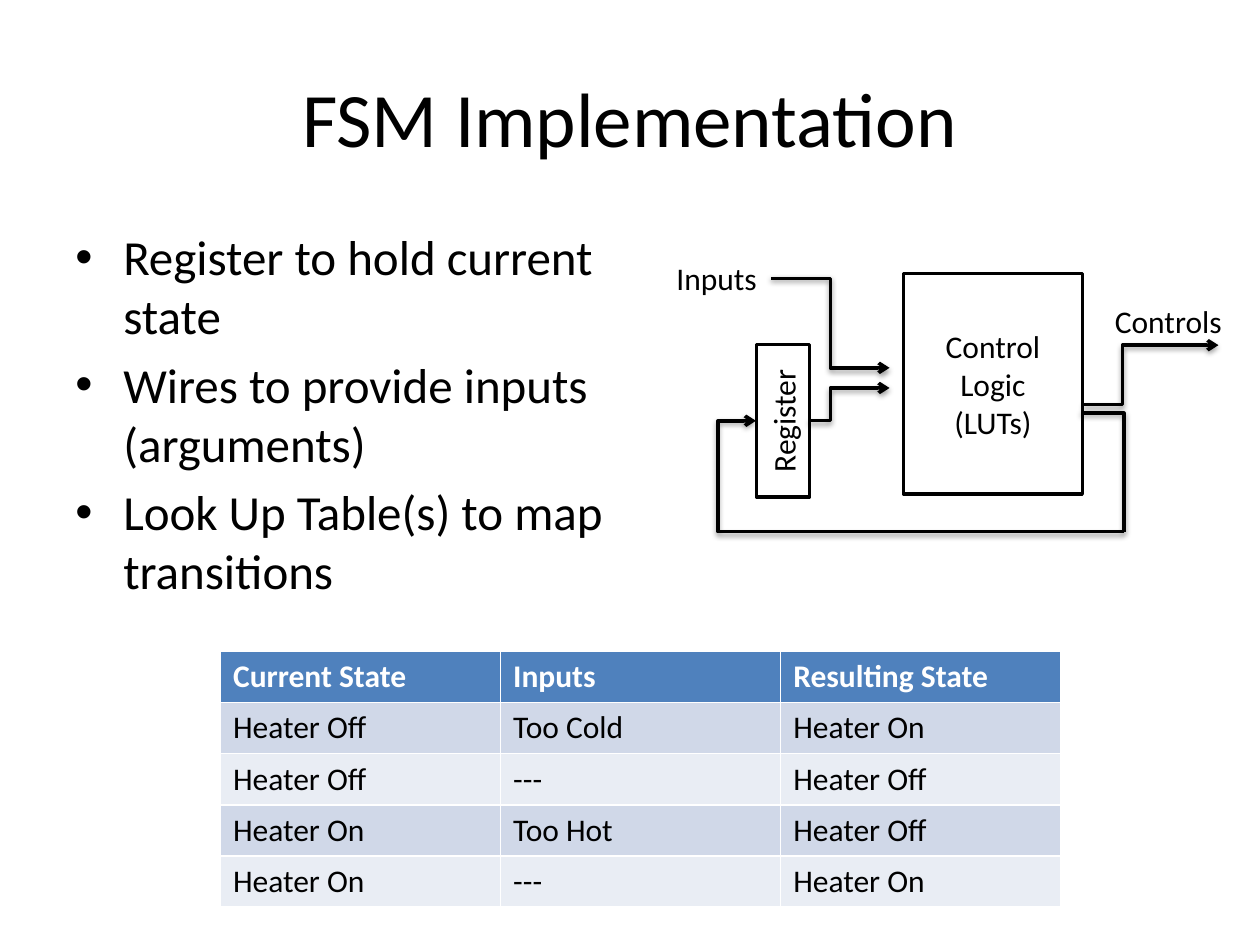
from dataclasses import dataclass
from typing import Any

from lxml import etree
from pptx import Presentation
from pptx.dml.color import RGBColor
from pptx.enum.shapes import MSO_CONNECTOR, MSO_SHAPE
from pptx.enum.text import MSO_ANCHOR, PP_ALIGN
from pptx.oxml import parse_xml
from pptx.oxml.ns import nsdecls, qn
from pptx.util import Inches, Pt

ELBOW = MSO_CONNECTOR.ELBOW
RECT = MSO_SHAPE.RECTANGLE
MIDDLE, TOP = MSO_ANCHOR.MIDDLE, MSO_ANCHOR.TOP
LEFT, CENTER = PP_ALIGN.LEFT, PP_ALIGN.CENTER

SHADOW = (
    f'<a:effectLst {nsdecls("a")}><a:outerShdw blurRad="40000" dist="20000" '
    'dir="5400000" rotWithShape="0"><a:srgbClr val="000000">'
    '<a:alpha val="38000"/></a:srgbClr></a:outerShdw></a:effectLst>'
)

ROWS = [
    ("Current State", "Inputs", "Resulting State"),
    ("Heater Off", "Too Cold", "Heater On"),
    ("Heater Off", "---", "Heater Off"),
    ("Heater On", "Too Hot", "Heater Off"),
    ("Heater On", "---", "Heater On"),
]
POINTS = [
    "Register to hold current state",
    "Wires to provide inputs (arguments)",
    "Look Up Table(s) to map transitions",
]
WIRES = [
    ((8.92, 4.22), (6, 3.34), 5.7, True),
    ((8.58, 3.28), (8.92, 4.22), 8.92, False),
    ((6.12, 2.21), (7.06, 2.92), 6.59, True),
    ((6.42, 3.34), (7.06, 3.08), 6.59, True),
    ((8.59, 3.21), (9.67, 2.74), 8.91, True),
]


def color(code):
    return RGBColor.from_string(code)


def inches(*sizes):
    return [Inches(size) for size in sizes]


@dataclass
class Painter:
    """Draws styled elements on the current slide."""

    slide: Any
    face: str = "Calibri"
    ink: str = "000000"
    paper: str = "FFFFFF"
    head: str = "4F81BD"
    bands: tuple = ("D0D8E8", "E9EDF4")
    width: float = 2

    def label(self, frame, lines, size=18, align=LEFT, ink=None, bold=False, bullet=False):
        for i, line in enumerate(lines):
            para = frame.add_paragraph() if i else frame.paragraphs[0]
            para.text = line
            para.alignment = align
            if bullet:
                props = para._p.get_or_add_pPr()
                props.set("marL", str(Inches(0.38)))
                props.set("indent", str(-Inches(0.38)))
                etree.SubElement(props, qn("a:buFont"), typeface="Arial")
                etree.SubElement(props, qn("a:buChar"), char="•")
                para.space_before = Pt(size * 0.2)
            font = para.font
            font.name, font.size, font.bold = self.face, Pt(size), bold
            font.color.rgb = color(ink or self.ink)

    def text(self, box, lines, wrap=True, anchor=TOP, **style):
        frame = self.slide.shapes.add_textbox(*inches(*box)).text_frame
        frame.word_wrap = wrap
        frame.vertical_anchor = anchor
        self.label(frame, lines, **style)

    def block(self, box, lines, turn=0):
        shape = self.slide.shapes.add_shape(RECT, *inches(*box))
        shape.shadow.inherit = False
        shape.rotation = turn
        shape.fill.solid()
        shape.fill.fore_color.rgb = color(self.paper)
        shape.line.color.rgb = color(self.ink)
        shape.line.width = Pt(self.width)
        shape.text_frame.vertical_anchor = MIDDLE
        self.label(shape.text_frame, lines, align=CENTER)

    def wire(self, start, end, bend, arrow):
        link = self.slide.shapes.add_connector(ELBOW, *inches(*start, *end))
        link.line.color.rgb = color(self.ink)
        link.line.width = Pt(self.width)
        props = link._element.spPr
        ratio = (bend - start[0]) / (end[0] - start[0])
        guides = props.find(qn("a:prstGeom")).get_or_add_avLst()
        etree.SubElement(
            guides, qn("a:gd"), name="adj1", fmla=f"val {round(ratio * 100000)}"
        )
        if arrow:
            etree.SubElement(props.find(qn("a:ln")), qn("a:tailEnd"), type="arrow")
        props.append(parse_xml(SHADOW))

    def table(self, box, rows):
        grid = self.slide.shapes.add_table(len(rows), len(rows[0]), *inches(*box)).table
        for r, row in enumerate(rows):
            for c, word in enumerate(row):
                cell = grid.cell(r, c)
                cell.fill.solid()
                fill = self.bands[(r - 1) % 2] if r else self.head
                cell.fill.fore_color.rgb = color(fill)
                ink = self.ink if r else self.paper
                self.label(cell.text_frame, [word], ink=ink, bold=not r)


def main():
    deck = Presentation()
    deck.slide_width, deck.slide_height = inches(10, 7.5)
    art = Painter(deck.slides.add_slide(deck.slide_layouts[6]))
    art.text((0.5, 0.3, 9, 1.25), ["FSM Implementation"], anchor=MIDDLE, size=44, align=CENTER)
    art.text((0.5, 1.75, 4.42, 4.95), POINTS, size=28, bullet=True)
    art.table((1.75, 5.17, 6.67, 2.03), ROWS)
    art.block((7.17, 2.17, 1.42, 1.75), ["Control Logic", "(LUTs)"])
    art.text((5.27, 2.01, 0.85, 0.4), ["Inputs"], wrap=False)
    art.block((5.61, 3.13, 1.21, 0.42), ["Register"], turn=270)
    for wire in WIRES:
        art.wire(*wire)
    art.text((8.75, 2.35, 1.06, 0.4), ["Controls"], wrap=False)
    deck.save("out.pptx")


if __name__ == "__main__":
    main()
